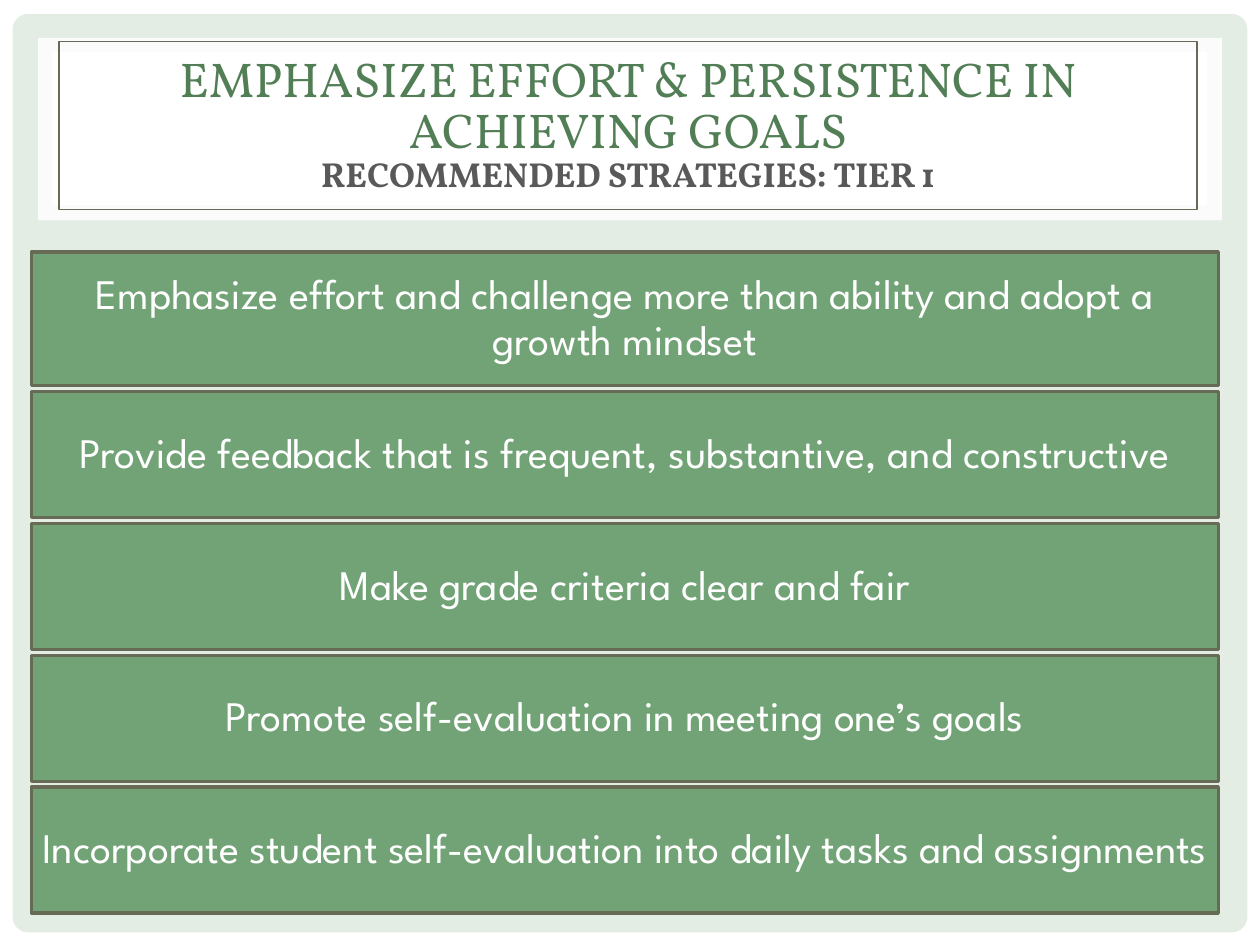
import pptx
import pptx.dml.color
import pptx.enum.shapes
import pptx.enum.text
import pptx.oxml
import pptx.oxml.ns
import pptx.util

Pt = pptx.util.Pt
RGB = pptx.dml.color.RGBColor
SHAPE = pptx.enum.shapes.MSO_SHAPE

WHITE = RGB(0xFF, 0xFF, 0xFF)
PALE_GREEN = RGB(0xE3, 0xED, 0xE4)
GREEN = RGB(0x72, 0xA3, 0x76)
DARK_GREEN = RGB(0x52, 0x7E, 0x56)
OLIVE = RGB(0x67, 0x6A, 0x55)
GREY = RGB(0x59, 0x59, 0x59)

TITLE = {"name": "Vollkorn", "size": Pt(27.9), "color": DARK_GREEN}
SUBTITLE = {"name": "Vollkorn", "size": Pt(19.8), "color": GREY, "bold": True}
BODY = {"name": "League Spartan", "size": Pt(24), "color": WHITE}

STRATEGIES = [
    "Emphasize effort and challenge more than ability and adopt a growth mindset",
    "Provide feedback that is frequent, substantive, and constructive",
    "Make grade criteria clear and fair",
    "Promote self-evaluation in meeting one’s goals",
    "Incorporate student self-evaluation into daily tasks and assignments",
]


class Deck:
    def __init__(self, width, height, background):
        self.prs = pptx.Presentation()
        self.prs.slide_width, self.prs.slide_height = Pt(width), Pt(height)
        self.s = self.prs.slides.add_slide(self.prs.slide_layouts[6])
        fill = self.s.background.fill
        fill.solid()
        fill.fore_color.rgb = background

    def box(self, at, fill=None, line=None, weight=0, kind=SHAPE.RECTANGLE, alpha=None):
        sp = self.s.shapes.add_shape(kind, *map(Pt, at))
        sp.shadow.inherit = False
        if fill is None:
            sp.fill.background()
        else:
            sp.fill.solid()
            sp.fill.fore_color.rgb = fill
        if alpha is not None:
            ns = pptx.oxml.ns
            color = sp.fill._xPr.find(ns.qn("a:solidFill"))[0]
            color.append(pptx.oxml.parse_xml(
                f'<a:alpha {ns.nsdecls("a")} val="{alpha * 1000}"/>'))
        if line is None:
            sp.line.fill.background()
        else:
            sp.line.color.rgb = line
            sp.line.width = Pt(weight)
        return sp

    def text(self, sp, lines, inset, spacing, after=0):
        """Write (text, font style) lines as one centred paragraph."""
        tf = sp.text_frame
        tf.word_wrap = True
        tf.vertical_anchor = pptx.enum.text.MSO_ANCHOR.MIDDLE
        for side, value in zip(("left", "top", "right", "bottom"), inset):
            setattr(tf, f"margin_{side}", Pt(value))
        p = tf.paragraphs[0]
        p.alignment = pptx.enum.text.PP_ALIGN.CENTER
        p.line_spacing = spacing
        p.space_after = Pt(after)
        for i, (words, style) in enumerate(lines):
            if i:
                p.add_line_break()
            r = p.add_run()
            r.text = words
            for key, value in style.items():
                if key == "color":
                    r.font.color.rgb = value
                else:
                    setattr(r.font, key, value)


def main():
    deck = Deck(720, 540, PALE_GREEN)
    deck.box((0, 0, 720, 540), WHITE)
    panel = deck.box((7.2, 7.9, 705.6, 524.9), PALE_GREEN, kind=SHAPE.ROUNDED_RECTANGLE)
    panel.adjustments[0] = 0.017
    deck.box((21.6, 21.6, 676.8, 104.4), WHITE, alpha=83)
    deck.box((29.5, 29.5, 660.2, 87.8), WHITE)

    top, gap = 144, 3.4
    for i, strategy in enumerate(STRATEGIES):
        height = 72 if i else 76.3
        row = deck.box((18, top, 678.2, height), GREEN, OLIVE, 2)
        deck.text(row, [(strategy, BODY)], (5, 5, 5, 5), 0.9, after=8.4)
        top += height + gap

    title = deck.box((33.8, 23.8, 650.2, 95.8), line=OLIVE, weight=0.75)
    deck.text(title, [("EMPHASIZE EFFORT & PERSISTENCE IN ACHIEVING GOALS", TITLE),
                      ("RECOMMENDED STRATEGIES: TIER 1", SUBTITLE)],
              (7.2, 3.6, 7.2, 3.6), 0.87)
    deck.prs.save("out.pptx")


if __name__ == "__main__":
    main()
